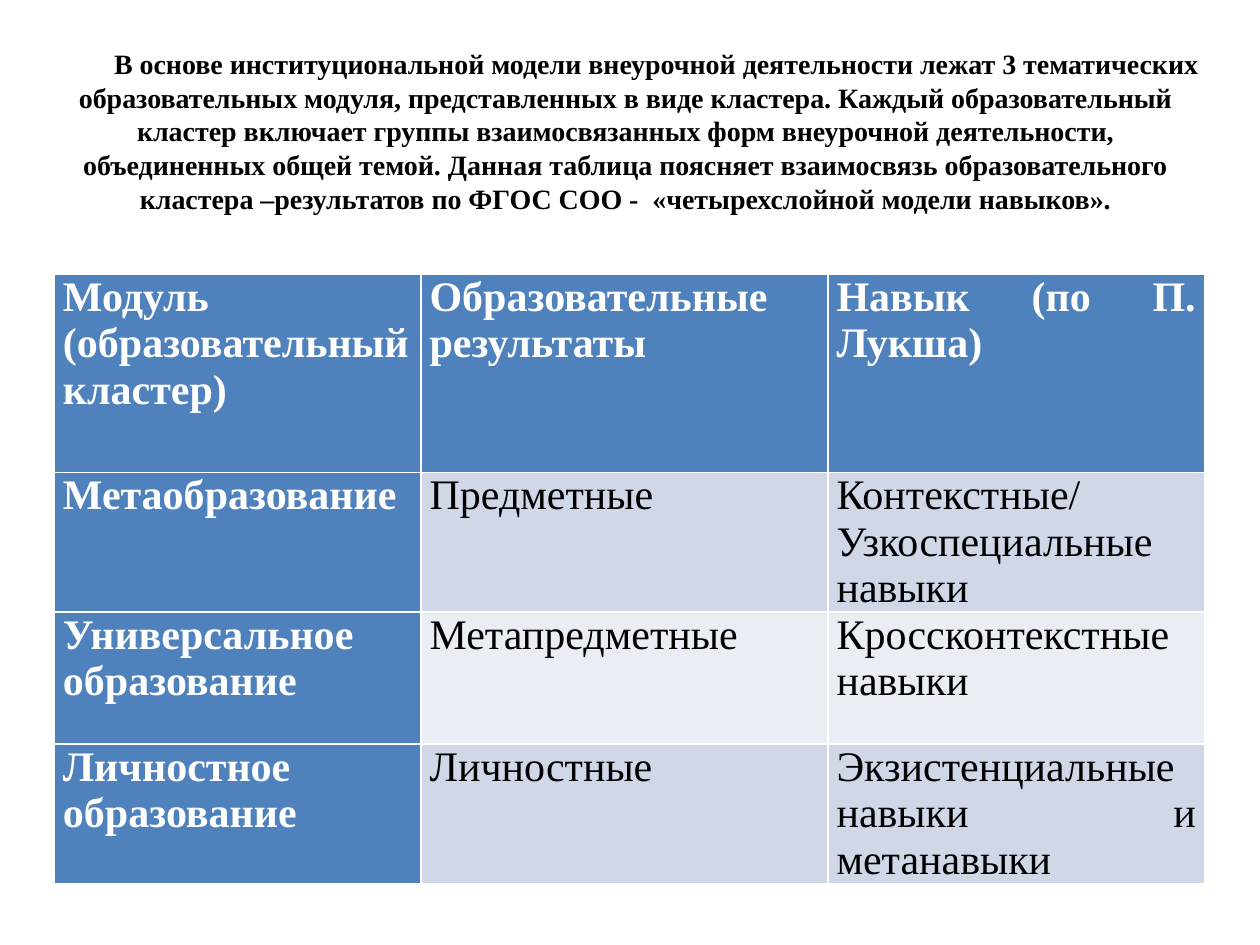
import dataclasses

import pptx
import pptx.dml.color
import pptx.enum.text
import pptx.util


@dataclasses.dataclass(frozen=True)
class Theme:
    font: str = "Times New Roman"
    title_size: int = 16
    table_size: int = 24
    dark: str = "000000"
    light: str = "FFFFFF"
    accent: str = "4F81BD"
    bands: tuple = ("D0D8E8", "E9EDF4")


def write(frame, text, *, font, size, color, bold, align):
    """Fill a text frame, one paragraph per line of text."""
    frame.text = text
    for para in frame.paragraphs:
        para.alignment = align
        for span in para.runs:
            span.font.name = font
            span.font.size = pptx.util.Pt(size)
            span.font.bold = bold
            span.font.color.rgb = pptx.dml.color.RGBColor.from_string(color)


class SlideBuilder:
    """Holds the theme and the current slide."""

    def __init__(self, deck, theme):
        self.deck = deck
        self.theme = theme
        self.page = deck.slides.add_slide(deck.slide_layouts[5])

    def across(self, share):
        return round(self.deck.slide_width * share)

    def down(self, share):
        return round(self.deck.slide_height * share)

    def title(self, text, left, top, width, height, indent, bottom):
        box = self.page.shapes.title
        box.left, box.top = self.across(left), self.down(top)
        box.width, box.height = self.across(width), self.down(height)
        frame = box.text_frame
        frame.word_wrap = True
        frame.auto_size = pptx.enum.text.MSO_AUTO_SIZE.NONE
        frame.vertical_anchor = pptx.enum.text.MSO_ANCHOR.MIDDLE
        frame.margin_bottom = self.down(bottom)
        write(frame, text, font=self.theme.font, size=self.theme.title_size,
              color=self.theme.dark, bold=True, align=pptx.enum.text.PP_ALIGN.CENTER)
        properties = frame.paragraphs[0]._p.get_or_add_pPr()
        properties.set("marL", "0")
        properties.set("indent", str(self.across(indent)))

    def table(self, rows, left, top, widths, heights):
        grid = self.page.shapes.add_table(
            len(rows), len(widths), self.across(left), self.down(top),
            self.across(sum(widths)), self.down(sum(heights))).table
        grid.first_col = True
        for column, width in zip(grid.columns, widths):
            column.width = self.across(width)
        for row, height in zip(grid.rows, heights):
            row.height = self.down(height)
        for row_index, texts in enumerate(rows):
            for column_index, text in enumerate(texts):
                heading = row_index == 0 or column_index == 0
                band = self.theme.bands[(row_index - 1) % 2]
                self.cell(grid.cell(row_index, column_index), text, heading, band)

    def cell(self, cell, text, heading, band):
        cell.margin_left = cell.margin_right = self.across(0.007)
        cell.margin_top = cell.margin_bottom = 0
        cell.fill.solid()
        cell.fill.fore_color.rgb = pptx.dml.color.RGBColor.from_string(
            self.theme.accent if heading else band)
        write(cell.text_frame, text, font=self.theme.font, size=self.theme.table_size,
              color=self.theme.light if heading else self.theme.dark,
              bold=heading, align=pptx.enum.text.PP_ALIGN.JUSTIFY)


TITLE = (
    "В основе институциональной модели внеурочной деятельности лежат 3 тематических "
    "образовательных модуля, представленных в виде кластера. Каждый образовательный "
    "кластер включает группы взаимосвязанных форм внеурочной деятельности, "
    "объединенных общей темой. Данная таблица поясняет взаимосвязь образовательного "
    "кластера –результатов по ФГОС СОО -  «четырехслойной модели навыков».")

MODULES = [
    ("Модуль (образовательный кластер)", "Образовательные результаты",
     "Навык (по П. Лукша)"),
    ("Метаобразование", "Предметные", "Контекстные/\nУзкоспециальные навыки"),
    ("Универсальное образование", "Метапредметные", "Кроссконтекстные навыки"),
    ("Личностное образование", "Личностные", "Экзистенциальные навыки и метанавыки"),
]


def main():
    deck = pptx.Presentation()
    deck.slide_width = pptx.util.Inches(10)
    deck.slide_height = pptx.util.Inches(7.5)
    builder = SlideBuilder(deck, Theme())
    builder.title(TITLE, left=0.028, top=0.04, width=0.937, height=0.23,
                  indent=0.049, bottom=0.04)
    builder.table(MODULES, left=0.043, top=0.29, widths=(0.291, 0.323, 0.299),
                  heights=(0.21, 0.14, 0.14, 0.14))
    deck.save("out.pptx")


if __name__ == "__main__":
    main()
